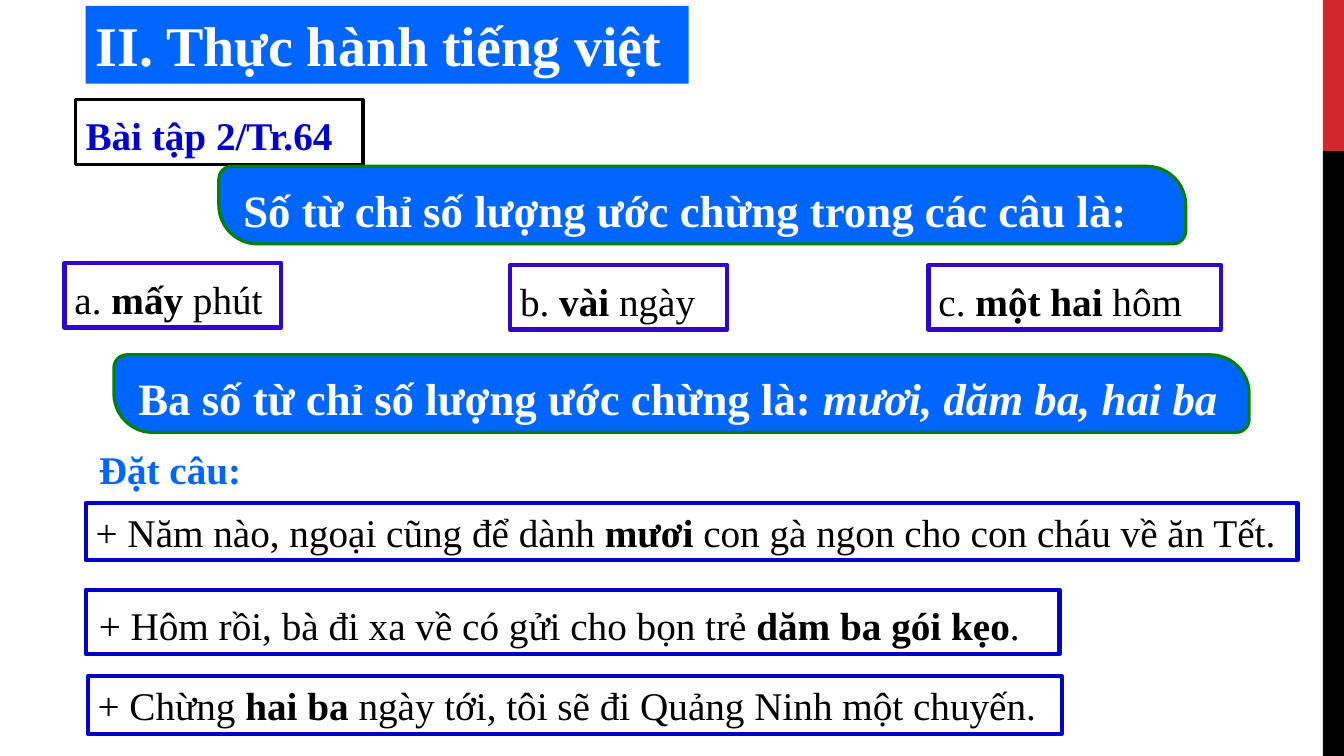
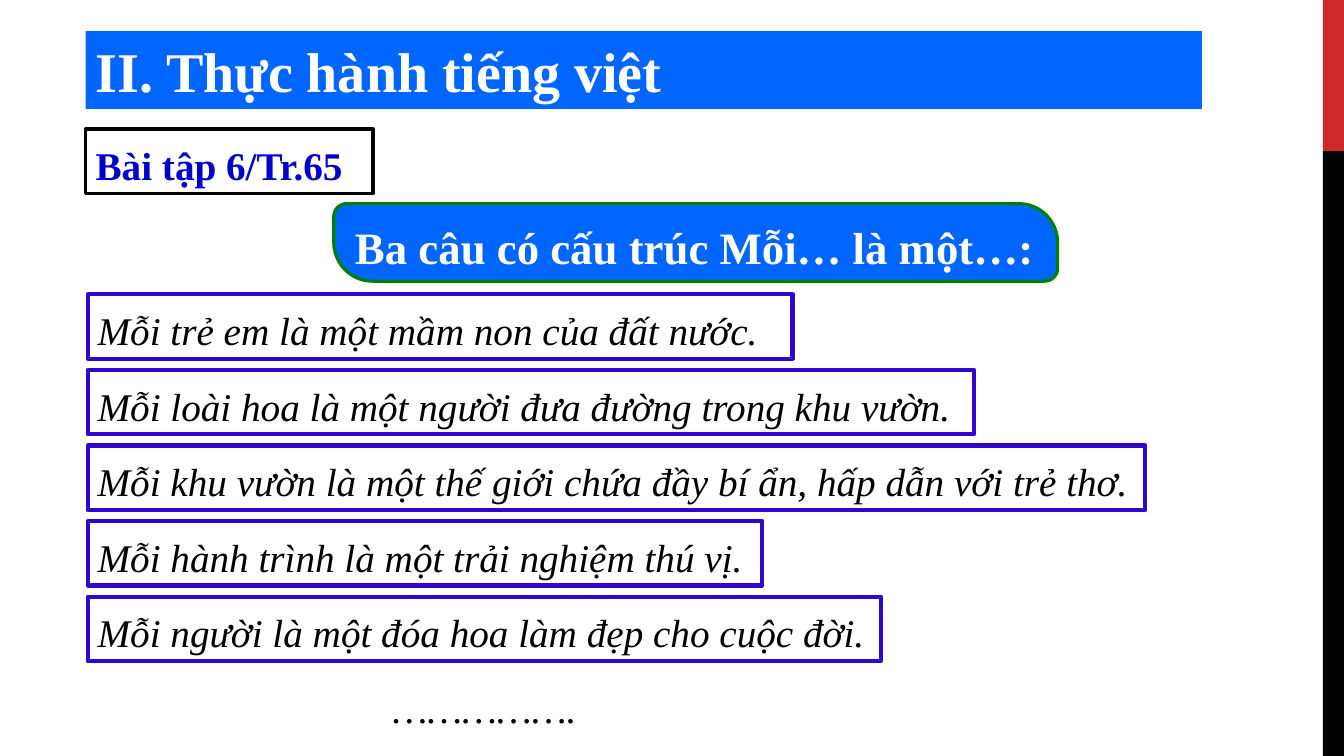
from pptx import Presentation
from pptx import util as u
from pptx.dml.color import RGBColor
from pptx.enum import shapes, text

FONT = "Times New Roman"
WIDTH, HEIGHT = 13.33, 7.5
BAND_W, BAND_SPLIT = 0.21, 1.5
COLORS = {
    "red": "D1282E", "black": "000000", "blue": "0066FF", "white": "FFFFFF",
    "navy": "0000CC", "violet": "3005CD", "green": "008000",
}
RECT = shapes.MSO_SHAPE.RECTANGLE
DIAGONAL = shapes.MSO_SHAPE.ROUND_2_DIAG_RECTANGLE
LEFT, JUSTIFY, CENTER = (text.PP_ALIGN.LEFT, text.PP_ALIGN.JUSTIFY,
                         text.PP_ALIGN.CENTER)
TOP, MIDDLE = text.MSO_ANCHOR.TOP, text.MSO_ANCHOR.MIDDLE

STYLES = {
    "title": dict(h=0.77, fill="blue", color="white", size=40, bold=True,
                  align=LEFT, spaced=False),
    "exercise": dict(h=0.64, line="black", weight=2.25, color="navy", bold=True),
    "banner": dict(h=0.77, shape=DIAGONAL, fill="blue", line="green",
                   weight=2.25, color="white", size=32, bold=True, anchor=MIDDLE),
    "answer": dict(h=0.64, line="violet"),
    "label": dict(h=0.64, color="blue", bold=True, indent=0.03),
    "example": dict(h=0.57, line="navy", align=LEFT, spaced=False),
    "spaced example": dict(h=0.64, line="navy", indent=0.03),
    "sentence": dict(h=0.64, line="violet", italic=True),
    "dots": dict(h=0.64, italic=True, align=CENTER),
}

# Runs are plain strings, or (text, emphasis) with emphasis "b" or "i".
TITLE = ["II. Thực hành tiếng việt"]
ANSWERS = [
    (0.64, 2.61, 2.15, ["a. ", ("mấy ", "b"), "phút"]),
    (5.06, 2.63, 2.15, ["b. ", ("vài ", "b"), "ngày"]),
    (9.21, 2.63, 2.9, ["c. ", ("một hai", "b"), " hôm"]),
]
EXAMPLES = [
    ("example", 0.85, 12.02, ["+ Năm nào, ngoại cũng để dành ", ("mươi", "b"),
                              " con gà ngon cho con cháu về ăn Tết."]),
    ("spaced example", 0.85, 9.66, ["+ Hôm rồi, bà đi xa về có gửi cho bọn trẻ ",
                                    ("dăm ba gói kẹo", "b"), "."]),
    ("example", 0.87, 9.66, ["+ Chừng ", ("hai ba ", "b"),
                             "ngày tới, tôi sẽ đi Quảng Ninh một chuyến."]),
]
SENTENCES = [
    ("sentence", 6.99, "Mỗi trẻ em là một mầm non của đất nước."),
    ("sentence", 8.79, "Mỗi loài hoa là một người đưa đường trong khu vườn."),
    ("sentence", 10.49,
     "Mỗi khu vườn là một thế giới chứa đầy bí ẩn, hấp dẫn với trẻ thơ."),
    ("sentence", 6.69, "Mỗi hành trình là một trải nghiệm thú vị."),
    ("sentence", 7.87, "Mỗi người là một đóa hoa làm đẹp cho cuộc đời."),
    ("dots", 7.87, "……………."),
]
EXAMPLE_TOP, EXAMPLE_PITCH = 4.99, 0.86
SENTENCE_TOP, SENTENCE_PITCH = 2.92, 0.75

# Each part: style, left, top, width, runs, extra style settings.
SLIDES = [
    [
        ("title", 0.85, 0.06, 5.98, TITLE),
        ("exercise", 0.75, 0.99, 2.85, ["Bài tập 2/Tr.64"]),
        ("banner", 2.17, 1.65, 9.59,
         ["Số từ chỉ số lượng ước chừng trong các câu là:"], {"indent": 0.03}),
        *[("answer", *answer) for answer in ANSWERS],
        ("banner", 1.13, 3.52, 11.26,
         ["Ba số từ chỉ số lượng ước chừng là: ", ("mươi, dăm ba, hai ba", "i")],
         {"indent": 0.03}),
        ("label", 0.85, 4.3, 1.77, ["Đặt câu:"]),
        *[(style, x, EXAMPLE_TOP + i * EXAMPLE_PITCH, w, runs)
          for i, (style, x, w, runs) in enumerate(EXAMPLES)],
    ],
    [
        ("title", 0.85, 0.31, 11.07, TITLE),
        ("exercise", 0.85, 1.28, 2.85, ["Bài tập 6/Tr.65"]),
        ("banner", 3.31, 2.02, 7.18, ["Ba câu có cấu trúc Mỗi… là một…:"]),
        *[(style, 0.87, SENTENCE_TOP + i * SENTENCE_PITCH, w, [line])
          for i, (style, w, line) in enumerate(SENTENCES)],
    ],
]


def rgb(name):
    return RGBColor.from_string(COLORS[name])


def add_box(slide, x, y, w, h, shape=RECT, fill=None, line=None, weight=3):
    sp = slide.shapes.add_shape(shape, *map(u.Inches, (x, y, w, h)))
    sp.shadow.inherit = False
    if fill:
        sp.fill.solid()
        sp.fill.fore_color.rgb = rgb(fill)
    else:
        sp.fill.background()
    if line:
        sp.line.color.rgb = rgb(line)
        sp.line.width = u.Pt(weight)
    else:
        sp.line.fill.background()
    return sp


def write(sp, runs, color="black", size=28, bold=False, italic=False,
          align=JUSTIFY, anchor=TOP, spaced=True, indent=0):
    tf = sp.text_frame
    tf.word_wrap = True
    tf.vertical_anchor = anchor
    tf.margin_left = u.Inches(0.1 + indent)
    p = tf.paragraphs[0]
    p.alignment = align
    if spaced:
        p.line_spacing = 1.15
        p.space_before = p.space_after = u.Pt(6)
    for run in runs:
        words, emphasis = (run, "") if isinstance(run, str) else run
        r = p.add_run()
        r.text = words
        r.font.name, r.font.size = FONT, u.Pt(size)
        r.font.color.rgb = rgb(color)
        r.font.bold = bold or emphasis == "b"
        r.font.italic = italic or emphasis == "i"


def add_part(slide, style, x, y, w, runs, extra=None):
    settings = {**STYLES[style], **(extra or {})}
    box_keys = {"h", "shape", "fill", "line", "weight"}
    box = {k: v for k, v in settings.items() if k in box_keys}
    words = {k: v for k, v in settings.items() if k not in box_keys}
    sp = add_box(slide, x, y, w, **box)
    if box.get("shape") == DIAGONAL:
        sp.adjustments[0], sp.adjustments[1] = 0.167, 0.5
    write(sp, runs, **words)


def add_master_bands(prs, slide):
    """Draw the right-hand bands, then move them to the slide master."""
    for color, top, bottom in (("red", 0, BAND_SPLIT),
                               ("black", BAND_SPLIT, HEIGHT)):
        band = add_box(slide, WIDTH - BAND_W, top, BAND_W, bottom - top, fill=color)
        prs.slide_master.shapes.element.append(band.element)


def main():
    prs = Presentation()
    prs.slide_width, prs.slide_height = u.Inches(WIDTH), u.Inches(HEIGHT)
    slides = [prs.slides.add_slide(prs.slide_layouts[6]) for _ in SLIDES]
    add_master_bands(prs, slides[0])
    for slide, parts in zip(slides, SLIDES):
        for part in parts:
            add_part(slide, *part)
    prs.save("out.pptx")


if __name__ == "__main__":
    main()
